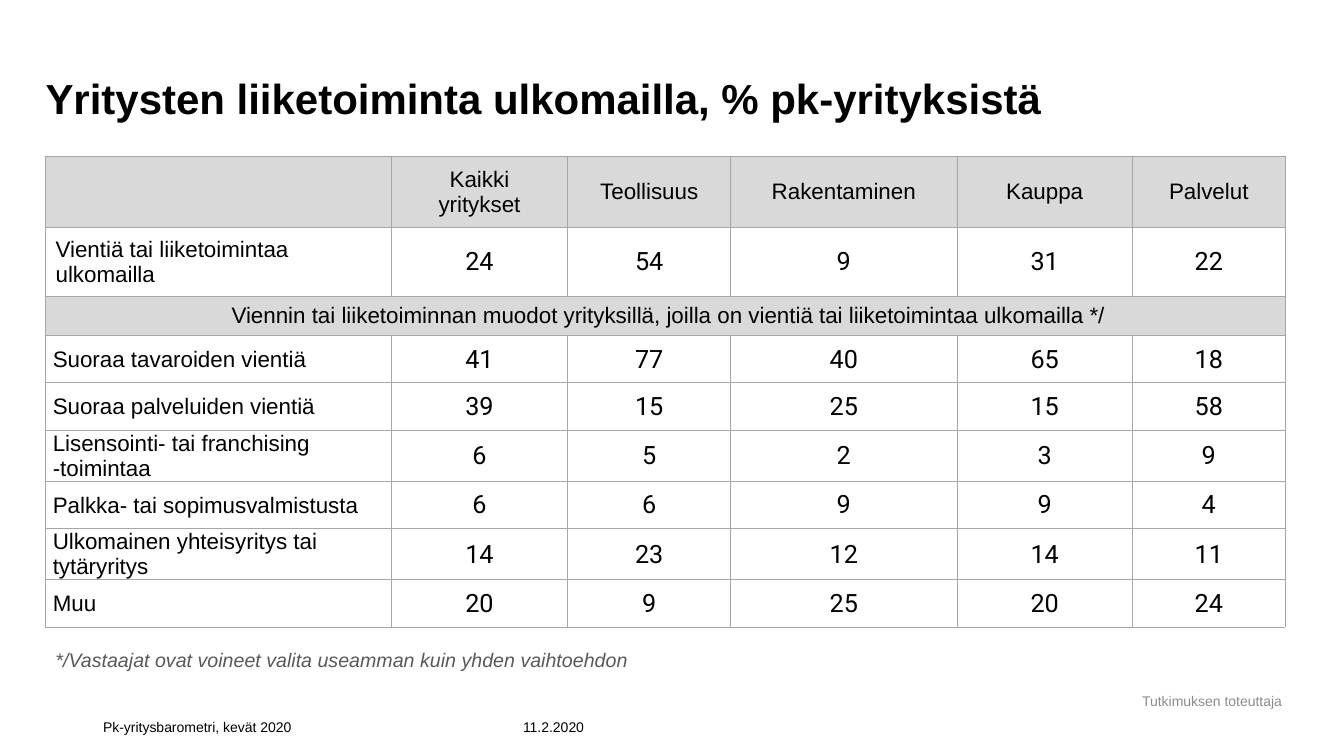
"""Build the slide on the foreign business of small and medium-sized firms."""
from lxml import etree
from pptx import Presentation, util as u
from pptx.dml.color import RGBColor
from pptx.enum import text
from pptx.oxml import ns

BLACK = RGBColor(0x00, 0x00, 0x00)
WHITE = RGBColor(0xFF, 0xFF, 0xFF)
BAND = RGBColor(0xD9, 0xD9, 0xD9)
RULE = RGBColor(0xA6, 0xA6, 0xA6)
NOTE = RGBColor(0x59, 0x59, 0x59)
CREDIT = RGBColor(0x8C, 0x8C, 0x8C)

LEFT, CENTER = text.PP_ALIGN.LEFT, text.PP_ALIGN.CENTER
TOP, MIDDLE, BOTTOM = text.MSO_ANCHOR.TOP, text.MSO_ANCHOR.MIDDLE, text.MSO_ANCHOR.BOTTOM
SIDES = ("left", "right", "top", "bottom")

HEADINGS = ["", "Kaikki\vyritykset", "Teollisuus", "Rakentaminen", "Kauppa", "Palvelut"]
ABROAD = ["Vientiä tai liiketoimintaa ulkomailla", 24, 54, 9, 31, 22]
SUBHEADING = ("Viennin tai liiketoiminnan muodot yrityksillä, "
              "joilla on vientiä tai liiketoimintaa ulkomailla */")
FORMS = [
    ["Suoraa tavaroiden vientiä", 41, 77, 40, 65, 18],
    ["Suoraa palveluiden vientiä", 39, 15, 25, 15, 58],
    ["Lisensointi- tai franchising\n-toimintaa", 6, 5, 2, 3, 9],
    ["Palkka- tai sopimusvalmistusta", 6, 6, 9, 9, 4],
    ["Ulkomainen yhteisyritys tai\ntytäryritys", 14, 23, 12, 14, 11],
    ["Muu", 20, 9, 25, 20, 24],
]
ROWS = [HEADINGS, ABROAD, [SUBHEADING] + [""] * 5] + FORMS
COLUMN_WIDTHS = [247, 126, 116.5, 161.5, 125.5, 109]
ROW_HEIGHTS = [51, 49, 28] + [34] * len(FORMS)
BAND_ROWS = (0, 2)


class Slide:
    """Hold the text style and the current slide."""

    def __init__(self, deck, font="Arial"):
        self.page = deck.slides.add_slide(deck.slide_layouts[5])
        self.font = font

    def set_words(self, frame, words, align=LEFT, **formats):
        """Put formatted words in a text frame."""
        frame.text = words
        style = {"name": self.font, "color": BLACK, **formats}
        for paragraph in frame.paragraphs:
            paragraph.alignment = align
            for key, value in style.items():
                if key == "color":
                    paragraph.font.color.rgb = value
                else:
                    setattr(paragraph.font, key, value)

    def title(self, words, box, **formats):
        """Move and format the title placeholder."""
        heading = self.page.shapes.title
        for key, value in zip(("left", "top", "width", "height"), box):
            setattr(heading, key, u.Pt(value))
        frame = heading.text_frame
        for side in SIDES:
            setattr(frame, "margin_" + side, 0)
        frame.vertical_anchor = BOTTOM
        self.set_words(frame, words, **formats)

    def label(self, words, box, anchor=BOTTOM, wrap=True, **formats):
        """Add a text box."""
        frame = self.page.shapes.add_textbox(*map(u.Pt, box)).text_frame
        frame.word_wrap = wrap
        frame.vertical_anchor = anchor
        self.set_words(frame, words, **formats)

    def border(self, cell):
        """Draw a thin rule on all four sides of a cell."""
        properties = cell._tc.get_or_add_tcPr()
        for side in ("lnL", "lnR", "lnT", "lnB"):
            line = etree.SubElement(properties, ns.qn("a:" + side), w=str(u.Pt(0.5)))
            fill = etree.SubElement(line, ns.qn("a:solidFill"))
            etree.SubElement(fill, ns.qn("a:srgbClr"), val=str(RULE))

    def cell(self, cell, words, color, margins, **formats):
        """Fill and format one table cell."""
        self.border(cell)
        cell.fill.solid()
        cell.fill.fore_color.rgb = color
        cell.vertical_anchor = MIDDLE
        for side, margin in zip(SIDES, margins):
            setattr(cell, "margin_" + side, u.Pt(margin))
        self.set_words(cell.text_frame, words, **formats)

    def table(self, rows, left, top):
        """Add the table of shares by line of business."""
        size = (sum(COLUMN_WIDTHS), sum(ROW_HEIGHTS))
        grid = self.page.shapes.add_table(
            len(rows), len(COLUMN_WIDTHS), *map(u.Pt, (left, top, *size))).table
        grid.first_row = grid.horz_banding = False
        for column, width in zip(grid.columns, COLUMN_WIDTHS):
            column.width = u.Pt(width)
        for row, height in zip(grid.rows, ROW_HEIGHTS):
            row.height = u.Pt(height)
        for r, row in enumerate(rows):
            for c, value in enumerate(row):
                share = isinstance(value, int)
                indent = 0.7 if c else 7.2 if r == 1 else 5.2
                self.cell(
                    grid.cell(r, c), str(value), BAND if r in BAND_ROWS else WHITE,
                    (indent, 0.7, 0.7, 0),
                    align=CENTER if c or r in BAND_ROWS else LEFT,
                    name="Roboto" if share else self.font,
                    size=u.Pt(18 if share else 16))
        grid.cell(2, 0).merge(grid.cell(2, len(COLUMN_WIDTHS) - 1))


def main():
    """Build and save the slide."""
    deck = Presentation()
    deck.slide_width, deck.slide_height = u.Pt(960), u.Pt(540)
    slide = Slide(deck)
    slide.title("Yritysten liiketoiminta ulkomailla, % pk-yrityksistä",
                (32.5, 0, 885.5, 88), size=u.Pt(30), bold=True)
    slide.table(ROWS, 32.5, 111.5)
    slide.label("*/Vastaajat ovat voineet valita useamman kuin yhden vaihtoehdon",
                (32.5, 459.5, 425.5, 46), TOP, False,
                size=u.Pt(14), italic=True, color=NOTE)
    slide.label("Tutkimuksen toteuttaja", (803.5, 491, 124.5, 19), MIDDLE, False,
                align=CENTER, size=u.Pt(10), color=CREDIT)
    slide.label("Pk-yritysbarometri, kevät 2020", (66.5, 504, 300, 25), size=u.Pt(10))
    slide.label("11.2.2020", (366.5, 504, 63, 25), size=u.Pt(10))
    deck.save("out.pptx")


if __name__ == "__main__":
    main()
